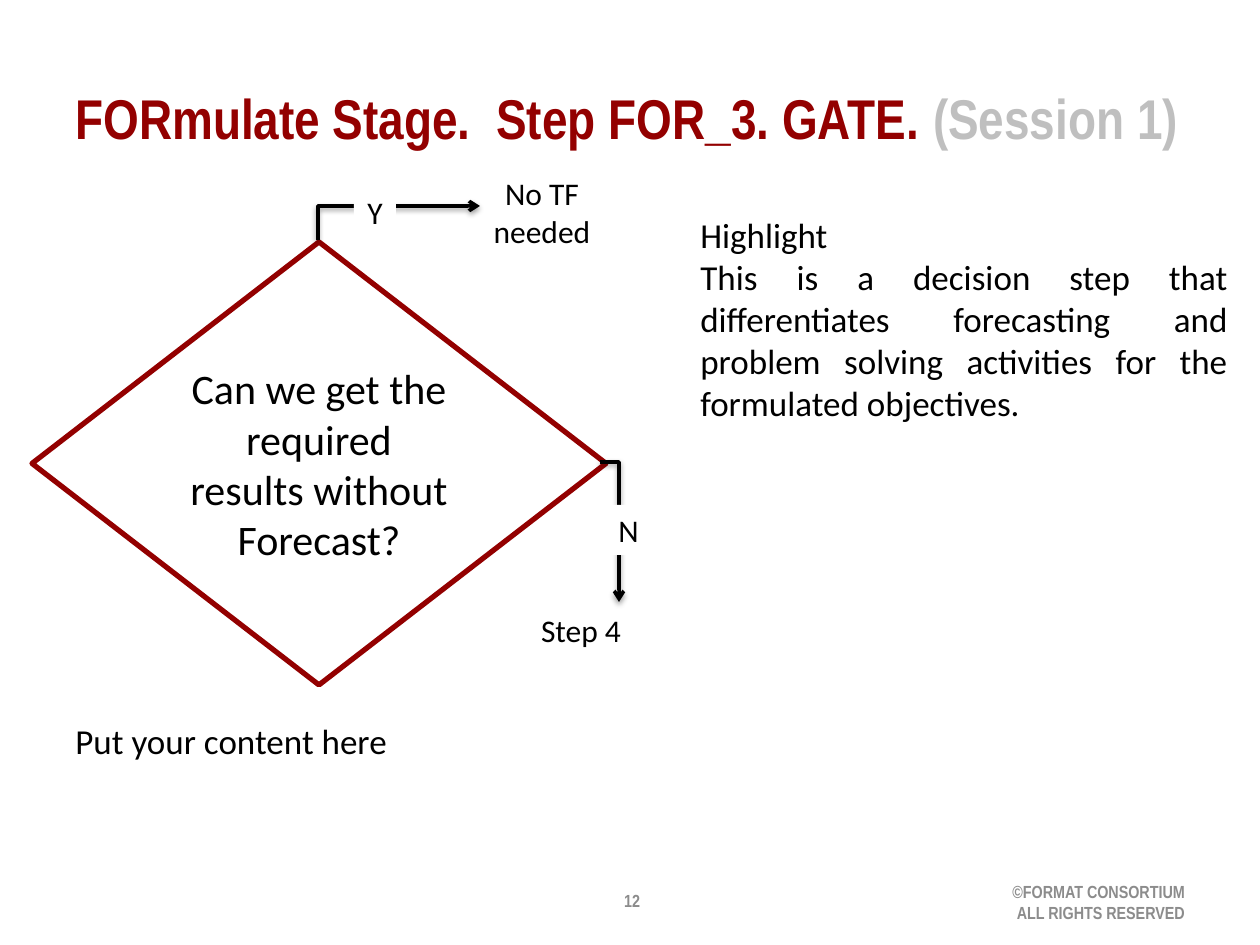
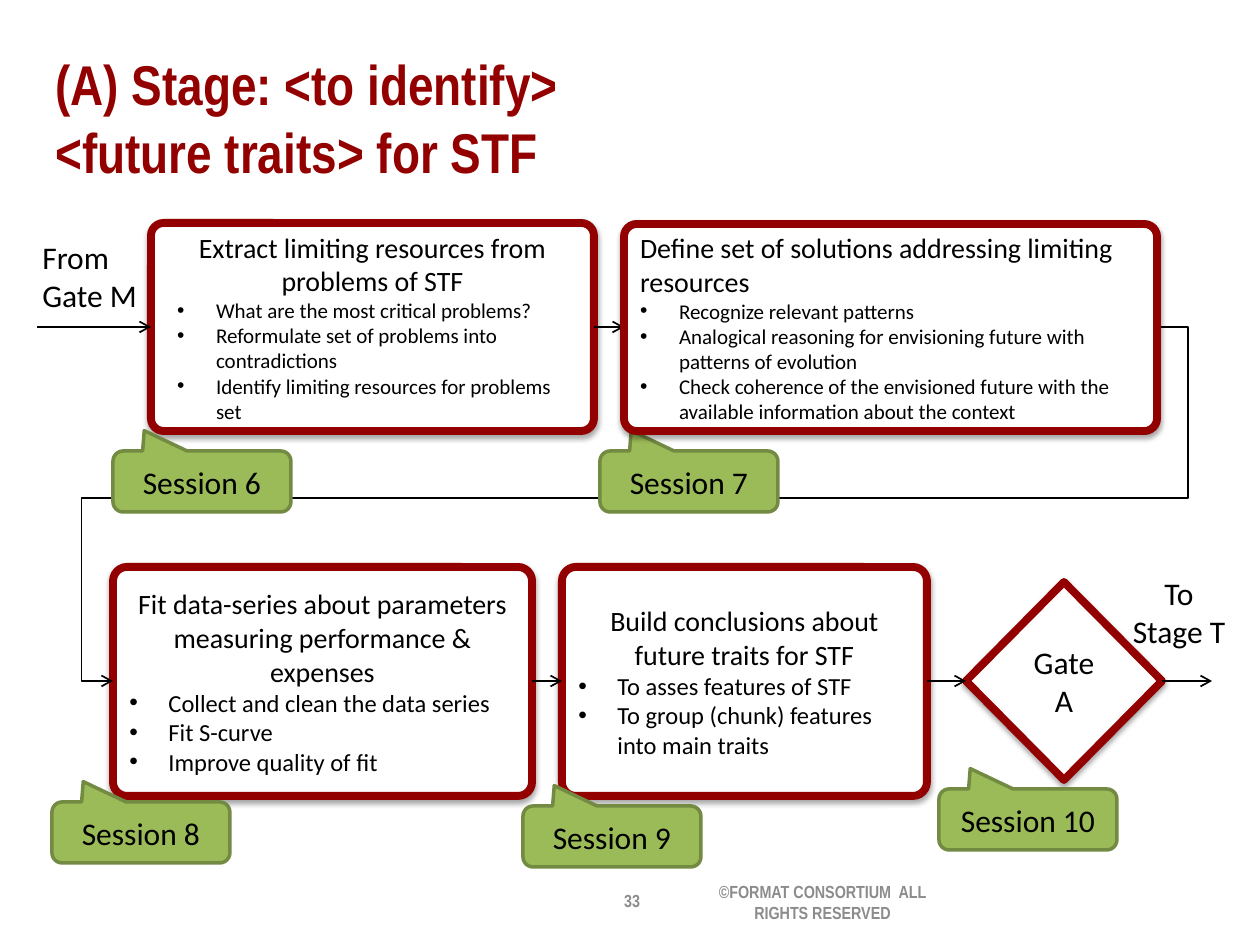
import pptx
import pptx.util
import pptx.dml.color
import pptx.enum.shapes
import pptx.enum.text
import pptx.oxml.ns
import lxml.etree

SCALE = 914400 / 126
COLORS = {
    "dark_red": "930000", "light_gray": "BFBFBF", "footer_gray": "8C8C8C",
    "black": "000000", "white": "FFFFFF", "green": "9BBB59", "dark_green": "738A42",
}
SHAPE = pptx.enum.shapes.MSO_SHAPE
ALIGN = pptx.enum.text.PP_ALIGN
ANCHOR = pptx.enum.text.MSO_ANCHOR
Pt = pptx.util.Pt
RGB = pptx.dml.color.RGBColor.from_string
qn = pptx.oxml.ns.qn
SubElement = lxml.etree.SubElement

TITLE = dict(size=32, font="Arial Narrow", color="dark_red", bold=True, anchor=ANCHOR.MIDDLE)
FOOTER = dict(size=10, font="Arial Narrow", color="footer_gray", bold=True,
              anchor=ANCHOR.MIDDLE, align=ALIGN.CENTER)
LABEL = dict(kind=SHAPE.RECTANGLE, fill="white", align=ALIGN.CENTER)
FRAMED = dict(fill="white", line="dark_red", line_width=4.5, anchor=ANCHOR.MIDDLE, shadow=35)
STEP = dict(FRAMED, kind=SHAPE.ROUNDED_RECTANGLE, adjust=[0.061], size=16)
CALLOUT = dict(kind=SHAPE.ROUNDED_RECTANGULAR_CALLOUT, adjust=[-0.324, -0.834, 0.167],
               fill="green", line="dark_green", line_width=2,
               anchor=ANCHOR.MIDDLE, align=ALIGN.CENTER)


def add_block(slide, box, lines, kind=None, size=18, font="Calibri", color="black", bold=False,
              align=ALIGN.LEFT, anchor=ANCHOR.TOP, fill=None, line=None, line_width=1,
              shadow=None, adjust=(), bullets=(), bullet_size=12, bullet_left=39):
    box = [round(length * SCALE) for length in box]
    if kind is None:
        block = slide.shapes.add_textbox(*box)
    else:
        block = slide.shapes.add_shape(kind, *box)
        block.shadow.inherit = False
        for index, value in enumerate(adjust):
            block.adjustments[index] = value
        if fill:
            block.fill.solid()
            block.fill.fore_color.rgb = RGB(COLORS[fill])
        else:
            block.fill.background()
        if line:
            block.line.color.rgb = RGB(COLORS[line])
            block.line.width = Pt(line_width)
        else:
            block.line.fill.background()
        if shadow:
            effects = block._element.spPr.find(qn("a:effectLst"))
            outer = SubElement(effects, qn("a:outerShdw"), blurRad="40000", dist="23000",
                               dir="5400000", rotWithShape="0")
            tint = SubElement(outer, qn("a:srgbClr"), val=COLORS["black"])
            SubElement(tint, qn("a:alpha"), val=str(shadow * 1000))
    frame = block.text_frame
    frame.word_wrap = True
    frame.vertical_anchor = anchor
    frame.text = "\n".join([*lines, *bullets])
    for index, paragraph in enumerate(frame.paragraphs):
        bulleted = index >= len(lines)
        paragraph.alignment = ALIGN.LEFT if bulleted else align
        if bulleted:
            properties = paragraph._p.get_or_add_pPr()
            properties.set("marL", str(round(bullet_left * SCALE)))
            properties.set("indent", str(round(-39 * SCALE)))
            SubElement(properties, qn("a:buFont"), typeface="Arial")
            SubElement(properties, qn("a:buChar"), char="•")
        for run in paragraph.runs:
            run.font.size = Pt(bullet_size if bulleted else size)
            run.font.name = font
            run.font.bold = bold
            run.font.color.rgb = RGB(COLORS[color])
    return block


def add_arrow(slide, begin, end, width=1, bend=None, turn=0, adjust=(), shadow=None):
    elbow = pptx.enum.shapes.MSO_CONNECTOR.ELBOW
    straight = pptx.enum.shapes.MSO_CONNECTOR.STRAIGHT
    ends = [round(length * SCALE) for length in (*begin, *end)]
    arrow = slide.shapes.add_connector(elbow if bend else straight, *ends)
    arrow.line.color.rgb = RGB(COLORS["black"])
    arrow.line.width = Pt(width)
    properties = arrow._element.spPr
    SubElement(properties.find(qn("a:ln")), qn("a:tailEnd"), type="arrow")
    if bend:
        geometry = properties.find(qn("a:prstGeom"))
        geometry.set("prst", bend)
        guides = geometry.find(qn("a:avLst"))
        for index, value in enumerate(adjust, 1):
            SubElement(guides, qn("a:gd"), name=f"adj{index}", fmla=f"val {value}")
    if turn:
        properties.find(qn("a:xfrm")).set("rot", str(turn * 60000))
    effects = SubElement(properties, qn("a:effectLst"))
    if shadow:
        outer = SubElement(effects, qn("a:outerShdw"), blurRad="40000", dist="20000",
                           dir="5400000", rotWithShape="0")
        tint = SubElement(outer, qn("a:srgbClr"), val=COLORS["black"])
        SubElement(tint, qn("a:alpha"), val=str(shadow * 1000))


deck = pptx.Presentation()
deck.slide_width = round(1260 * SCALE)
deck.slide_height = round(945 * SCALE)
blank = deck.slide_layouts[6]
gate_slide = deck.slides.add_slide(blank)
stage_slide = deck.slides.add_slide(blank)

for slide, number in ((gate_slide, "12"), (stage_slide, "33")):
    add_block(slide, (485, 876, 294, 50), [number], **FOOTER)

title = add_block(gate_slide, (63, 38, 1134, 158),
                  ["FORmulate Stage.  Step FOR_3. GATE. "], **TITLE)
session = title.text_frame.paragraphs[0].add_run()
session.text = "(Session 1)"
session.font.size = Pt(TITLE["size"])
session.font.name = TITLE["font"]
session.font.bold = True
session.font.color.rgb = RGB(COLORS["light_gray"])
add_block(gate_slide, (798, 877, 399, 50), ["©FORMAT CONSORTIUM", "ALL RIGHTS RESERVED"],
          **dict(FOOTER, align=ALIGN.RIGHT))
add_block(gate_slide, (32, 242, 574, 443), ["Can we get the required results without Forecast?"],
          kind=SHAPE.DIAMOND, size=24, line="dark_red", line_width=3,
          anchor=ANCHOR.MIDDLE, align=ALIGN.CENTER)
add_block(gate_slide, (476, 168, 132, 89), ["No TF needed"], **LABEL)
add_arrow(gate_slide, (416, 304), (382, 142), width=2, bend="bentConnector2", turn=90, shadow=38)
add_block(gate_slide, (354, 187, 42, 50), ["Y"], **LABEL)
add_block(gate_slide, (515, 605, 132, 50), ["Step 4"], **LABEL)
add_arrow(gate_slide, (600, 462), (619, 602), width=2, bend="bentConnector2", shadow=38)
add_block(gate_slide, (606, 505, 42, 50), ["N"], **LABEL)
add_block(gate_slide, (688, 207, 552, 224),
          ["Highlight", "This is a decision step that differentiates forecasting and "
           "problem solving activities for the formulated objectives."],
          size=20, align=ALIGN.JUSTIFY)
add_block(gate_slide, (63, 713, 1154, 55), ["Put your content here"], size=20)

add_block(stage_slide, (43, 38, 658, 158),
          ["(A) Stage: <to identify> <future traits> for STF"], **TITLE)
add_block(stage_slide, (689, 877, 267, 50), ["©FORMAT CONSORTIUM  ALL RIGHTS RESERVED"], **FOOTER)

centered_steps = [
    ((151, 223, 443, 208), "Extract limiting resources from problems of STF", 12, 49,
     ["What are the most critical problems?",
      "Reformulate set of problems into contradictions",
      "Identify limiting resources for problems set"]),
    ((113, 567, 419, 229), "Fit data-series about parameters measuring performance & expenses", 14, 39,
     ["Collect and clean the data series", "Fit S-curve", "Improve quality of fit"]),
    ((562, 567, 365, 229), "Build conclusions about future traits for STF", 14, 39,
     ["To asses features of STF", "To group (chunk) features into main traits"]),
]
for box, heading, bullet_size, bullet_left, tasks in centered_steps:
    add_block(stage_slide, box, [heading], align=ALIGN.CENTER, bullets=tasks,
              bullet_size=bullet_size, bullet_left=bullet_left, **STEP)

add_block(stage_slide, (30, 232, 126, 89), ["From Gate M"])
add_block(stage_slide, (1116, 568, 126, 89), ["To Stage T"], align=ALIGN.CENTER)
add_block(stage_slide, (966, 582, 196, 198), ["Gate A"], kind=SHAPE.DIAMOND,
          align=ALIGN.CENTER, **FRAMED)

top_row, bottom_row = 327, 681
for start, stop, row in ((37, 151, top_row), (594, 624, top_row), (532, 562, bottom_row),
                         (927, 966, bottom_row), (1162, 1212, bottom_row)):
    add_arrow(stage_slide, (start, row), (stop, row))
add_arrow(stage_slide, (1157, top_row), (113, bottom_row), bend="bentConnector5",
          adjust=(-3000, 48400, 103000))

for number, (left, top) in enumerate(
        ((113, 451), (600, 451), (52, 802), (523, 806), (939, 789)), 6):
    add_block(stage_slide, (left, top, 178, 61), [f"Session {number}"], **CALLOUT)

add_block(stage_slide, (624, 224, 533, 207),
          ["Define set of solutions addressing limiting resources"],
          bullets=["Recognize relevant patterns",
                   "Analogical reasoning for envisioning future with patterns of evolution",
                   "Check coherence of the envisioned future with the available "
                   "information about the context"], **STEP)

deck.save("out.pptx")
